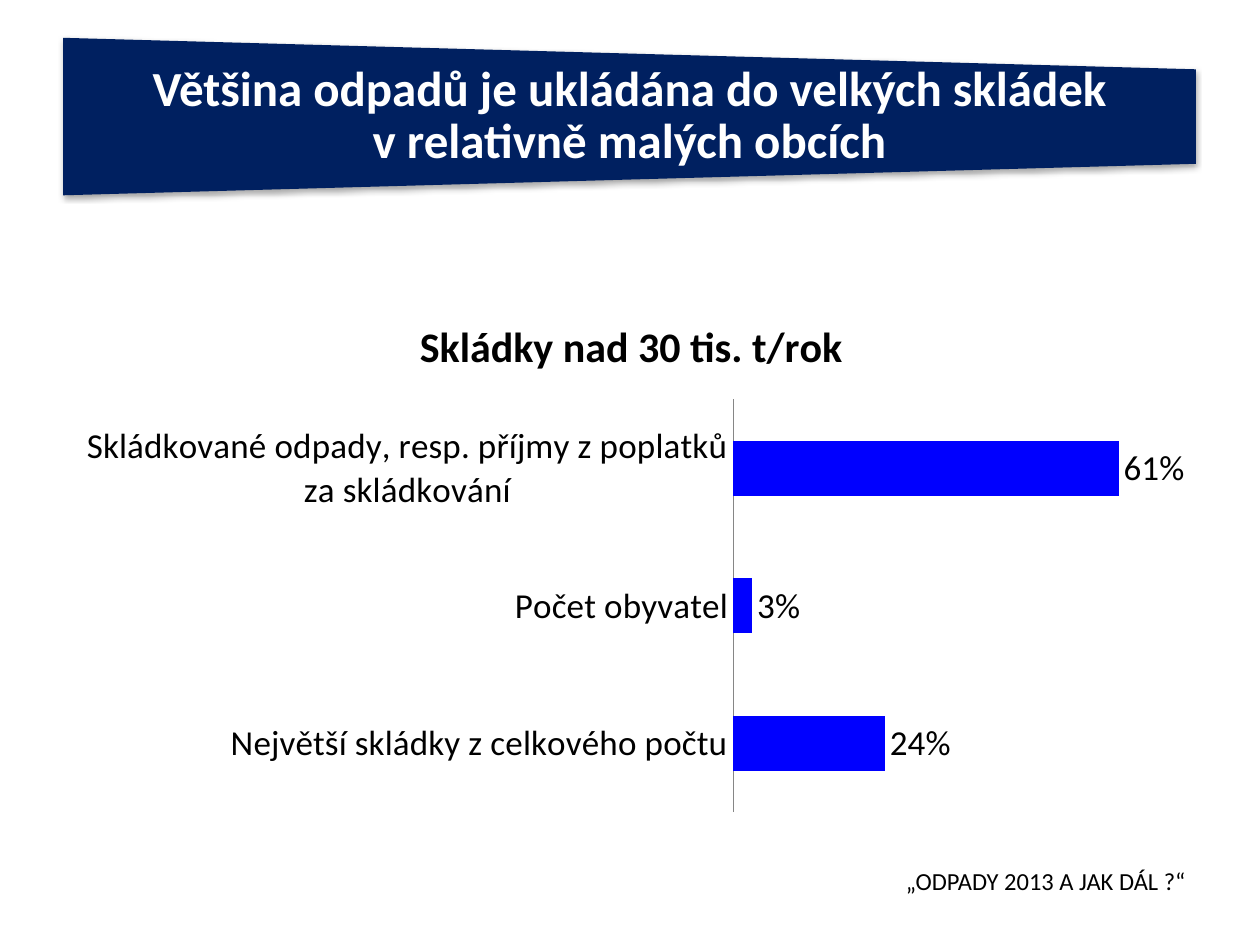
from dataclasses import dataclass

import lxml.etree
import pptx
import pptx.chart.data
import pptx.dml.color
import pptx.enum.chart
import pptx.enum.shapes
import pptx.enum.text
import pptx.oxml
import pptx.oxml.ns
import pptx.util

Inches = pptx.util.Inches
Align = pptx.enum.text.PP_ALIGN
Anchor = pptx.enum.text.MSO_ANCHOR


@dataclass(frozen=True)
class Theme:
    font: str = "Calibri"
    navy: str = "002060"
    blue: str = "0000FF"
    white: str = "FFFFFF"
    black: str = "000000"
    axis: str = "868686"
    heading_size: int = 28
    chart_title_size: int = 24
    chart_size: int = 20
    footer_size: int = 14


@dataclass(frozen=True)
class Box:
    left: float
    top: float
    width: float
    height: float

    def lengths(self) -> tuple:
        return tuple(Inches(v) for v in (self.left, self.top, self.width, self.height))


@dataclass(frozen=True)
class Label:
    text: str
    box: Box
    size: int
    color: str
    align: Align
    anchor: Anchor = Anchor.TOP
    bold: bool = False
    side_inset: float = 0.1
    top_inset: float = 0.05
    line_spacing: float = 1.0


THEME = Theme()
BANNER = Box(0.5, 0.3, 8.99, 1.25)
CHART = Box(0.51, 2.33, 9, 4.2)
PLOT_SHARE = {"x": 0.59, "y": 0.2, "w": 0.39, "h": 0.78}
SHARES = {
    "Největší skládky z celkového počtu": 0.24,
    "Počet obyvatel": 0.03,
    "Skládkované odpady, resp. příjmy z poplatků za skládkování": 0.61,
}
LABELS = [
    Label("Většina odpadů je ukládána do velkých skládek v\u00a0relativně malých obcích",
          Box(0.5, 0.55, 8.99, 0.75), THEME.heading_size, THEME.white, Align.CENTER,
          Anchor.MIDDLE, True, 0.19, 0, 0.9),
    Label("„ODPADY 2013 A JAK DÁL ?“", Box(6.34, 6.82, 3.17, 0.52),
          THEME.footer_size, THEME.black, Align.RIGHT),
]


def rgb(color: str) -> pptx.dml.color.RGBColor:
    return pptx.dml.color.RGBColor.from_string(color)


def style_font(font, size: int, color: str = THEME.black, bold: bool = False) -> None:
    font.name = THEME.font
    font.size = pptx.util.Pt(size)
    font.bold = bold
    font.color.rgb = rgb(color)


def add_label(slide, label: Label) -> None:
    frame = slide.shapes.add_textbox(*label.box.lengths()).text_frame
    frame.word_wrap = True
    frame.vertical_anchor = label.anchor
    frame.margin_left = frame.margin_right = Inches(label.side_inset)
    frame.margin_top = frame.margin_bottom = Inches(label.top_inset)
    paragraph = frame.paragraphs[0]
    paragraph.alignment = label.align
    paragraph.line_spacing = label.line_spacing
    run = paragraph.add_run()
    run.text = label.text
    style_font(run.font, label.size, label.color, label.bold)


def add_banner(slide, box: Box) -> None:
    # A quarter turn swaps width and height about the same centre
    half_difference = (box.width - box.height) / 2
    upright = Box(box.left + half_difference, box.top - half_difference, box.height, box.width)
    shape = slide.shapes.add_shape(
        pptx.enum.shapes.MSO_SHAPE.FLOWCHART_MANUAL_OPERATION, *upright.lengths())
    shape.rotation = 270
    shape.fill.solid()
    shape.fill.fore_color.rgb = rgb(THEME.navy)
    shape.line.fill.background()
    # Soft shadow straight below
    shape.shadow.inherit = False
    effects = shape.element.spPr.find(pptx.oxml.ns.qn("a:effectLst"))
    effects.append(pptx.oxml.parse_xml(
        f'<a:outerShdw {pptx.oxml.ns.nsdecls("a")} blurRad="{pptx.util.Pt(3.1)}" '
        f'dist="{pptx.util.Pt(1.8)}" dir="5400000" rotWithShape="0">'
        f'<a:srgbClr val="{THEME.black}"><a:alpha val="35000"/></a:srgbClr></a:outerShdw>'))


def fix_plot_area(chart) -> None:
    qn = pptx.oxml.ns.qn
    plot_area = chart.element.find(f".//{qn('c:plotArea')}")
    for old_layout in plot_area.findall(qn("c:layout")):
        plot_area.remove(old_layout)
    layout = lxml.etree.Element(qn("c:layout"))
    manual = lxml.etree.SubElement(layout, qn("c:manualLayout"))
    settings = {"layoutTarget": "inner", "xMode": "edge", "yMode": "edge", **PLOT_SHARE}
    for name, value in settings.items():
        lxml.etree.SubElement(manual, qn(f"c:{name}")).set("val", str(value))
    plot_area.insert(0, layout)


def add_share_chart(slide, box: Box) -> None:
    data = pptx.chart.data.CategoryChartData(number_format="0%")
    data.categories = list(SHARES)
    data.add_series("Series 1", list(SHARES.values()))
    chart = slide.shapes.add_chart(
        pptx.enum.chart.XL_CHART_TYPE.BAR_CLUSTERED, *box.lengths(), data).chart
    style_font(chart.font, THEME.chart_size)
    chart.has_legend = False

    # Title
    chart.has_title = True
    run = chart.chart_title.text_frame.paragraphs[0].add_run()
    run.text = "Skládky nad 30 tis. t/rok"
    style_font(run.font, THEME.chart_title_size, bold=True)
    chart.chart_title.include_in_layout = False

    # Axes
    tick_none = pptx.enum.chart.XL_TICK_MARK.NONE
    category_axis = chart.category_axis
    category_axis.major_tick_mark = category_axis.minor_tick_mark = tick_none
    category_axis.format.line.color.rgb = rgb(THEME.axis)
    category_axis.format.line.width = pptx.util.Pt(0.75)
    value_axis = chart.value_axis
    value_axis.minimum_scale, value_axis.maximum_scale = 0, 0.7
    value_axis.has_major_gridlines = False
    value_axis.visible = False

    # Bars and their labels
    plot = chart.plots[0]
    plot.gap_width = 150
    plot.overlap = -25
    plot.vary_by_categories = False
    series = plot.series[0]
    series.format.fill.solid()
    series.format.fill.fore_color.rgb = rgb(THEME.blue)
    labels = series.data_labels
    labels.show_value = True
    labels.number_format = "0%"
    labels.number_format_is_linked = False
    labels.position = pptx.enum.chart.XL_LABEL_POSITION.OUTSIDE_END
    style_font(labels.font, THEME.chart_size)
    fix_plot_area(chart)


def main() -> None:
    presentation = pptx.Presentation()
    presentation.slide_width = Inches(10)
    presentation.slide_height = Inches(7.5)
    slide = presentation.slides.add_slide(presentation.slide_layouts[6])
    add_banner(slide, BANNER)
    for label in LABELS:
        add_label(slide, label)
    add_share_chart(slide, CHART)
    presentation.save("out.pptx")


if __name__ == "__main__":
    main()
